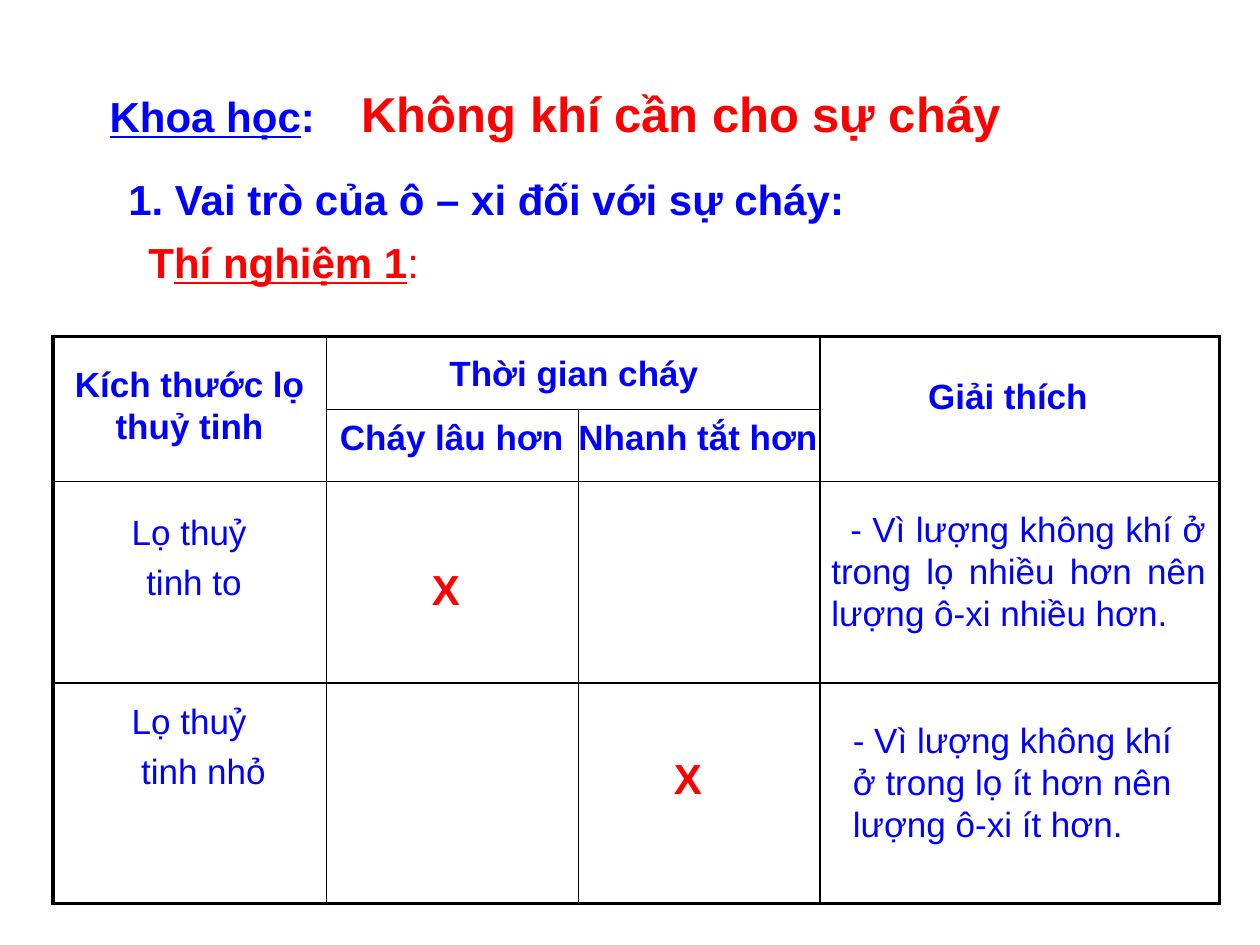
from dataclasses import dataclass
from typing import Optional

from lxml.etree import SubElement
from pptx import Presentation
from pptx.dml.color import RGBColor
from pptx.enum.text import PP_ALIGN
from pptx.oxml import parse_xml
from pptx.oxml.ns import nsdecls, qn
from pptx.util import Inches, Pt

BLUE = RGBColor(0x00, 0x00, 0xFF)
RED = RGBColor(0xFF, 0x00, 0x00)
BORDER = "000000"

# Character formats
BODY = {"size": Pt(20), "color": BLUE}
HEADER = {**BODY, "bold": True}
SECTION = {"size": Pt(24), "color": BLUE, "bold": True}
SUBJECT = {**SECTION, "underline": True}
LESSON = {"size": Pt(28), "color": RED, "bold": True}
EXPERIMENT = {**SECTION, "color": RED}
EXPERIMENT_LINK = {**EXPERIMENT, "underline": True}
EXPERIMENT_END = {"size": Pt(24), "color": RED}


@dataclass
class Line:
    runs: list
    align: PP_ALIGN = PP_ALIGN.LEFT
    before: float = 0
    left: float = 0
    first: float = 0
    tab: Optional[float] = None


@dataclass
class Label:
    x: float
    y: float
    w: float
    h: float
    lines: list
    margin_left: float = 0.1
    margin_top: float = 0.05


def centred(text: str, style: dict, **layout) -> Line:
    return Line([(text, style)], PP_ALIGN.CENTER, **layout)


def add_run(paragraph, text: str, style: dict) -> None:
    run = paragraph.add_run()
    run.text = text
    for name, value in {"name": "Arial", **style}.items():
        if name == "color":
            run.font.color.rgb = value
        else:
            setattr(run.font, name, value)


def add_label(slide, label: Label) -> None:
    box = slide.shapes.add_textbox(*map(Inches, (label.x, label.y, label.w, label.h)))
    frame = box.text_frame
    frame.word_wrap = True
    frame.margin_left = Inches(label.margin_left)
    frame.margin_top = Inches(label.margin_top)
    for index, line in enumerate(label.lines):
        paragraph = frame.add_paragraph() if index else frame.paragraphs[0]
        paragraph.alignment = line.align
        paragraph.space_before = Pt(line.before)
        properties = paragraph._p.get_or_add_pPr()
        properties.set("marL", str(Inches(line.left)))
        properties.set("indent", str(Inches(line.first)))
        if line.tab is not None:
            stops = SubElement(properties, qn("a:tabLst"))
            SubElement(stops, qn("a:tab"), pos=str(Inches(line.tab)), algn="l")
        for text, style in line.runs:
            add_run(paragraph, text, style)


def set_borders(cell, widths: dict) -> None:
    properties = cell._tc.get_or_add_tcPr()
    for index, (side, width) in enumerate(widths.items()):
        properties.insert(index, parse_xml(
            f'<a:ln{side} {nsdecls("a")} w="{Pt(width)}"><a:solidFill>'
            f'<a:srgbClr val="{BORDER}"/></a:solidFill></a:ln{side}>'))


def add_grid(slide, x: float, y: float, columns: list, rows: list, merges: list) -> None:
    frame = slide.shapes.add_table(
        len(rows), len(columns),
        *map(Inches, (x, y, sum(columns), sum(rows))))
    table = frame.table
    table.first_row = table.horz_banding = False
    for column, width in zip(table.columns, columns):
        column.width = Inches(width)
    for row, height in zip(table.rows, rows):
        row.height = Inches(height)
    for start, end in merges:
        table.cell(*start).merge(table.cell(*end))

    # Thick frame outside, thin rules inside
    for r in range(len(rows)):
        for c in range(len(columns)):
            cell = table.cell(r, c)
            cell.fill.background()
            if cell.is_spanned:
                continue
            bottom, right = r, c
            if cell.is_merge_origin:
                bottom += cell.span_height - 1
                right += cell.span_width - 1
            outer = {"L": c == 0, "R": right == len(columns) - 1,
                     "T": r == 0, "B": bottom == len(rows) - 1}
            set_borders(cell, {side: 2.25 if edge else 1 for side, edge in outer.items()})


HEADINGS = [
    Label(0.67, 0, 9.58, 1.9, [Line([
        ("Khoa học", SUBJECT), (":\t", SECTION),
        ("Không khí cần cho sự cháy", LESSON)], tab=2.19)],
        margin_left=0.2, margin_top=0.66),
    Label(0.92, 1.33, 7.92, 0.5,
          [Line([("1. Vai trò của ô – xi đối với sự cháy:", SECTION)])]),
    Label(1.08, 1.83, 2.75, 1.11, [Line([
        ("T", EXPERIMENT), ("hí nghiệm 1", EXPERIMENT_LINK), (":", EXPERIMENT_END)])]),
]

TABLE_HEADERS = [
    Label(x, y, w, h, [centred(text, HEADER)])
    for x, y, w, h, text in [
        (0.42, 2.83, 2.17, 1.22, "Kích thước lọ thuỷ tinh"),
        (2.75, 2.74, 3.61, 0.93, "Thời gian cháy"),
        (2.42, 3.25, 2.33, 0.43, "Cháy lâu hơn"),
        (4.33, 3.25, 2.42, 0.43, "Nhanh tắt hơn"),
        (7, 2.92, 2, 0.43, "Giải thích"),
    ]
]

JARS = [
    Label(0.5, y, 2.08, h, [centred("Lọ thuỷ ", BODY),
                            centred(size, BODY, before=4.6, left=shift)])
    for y, h, size, shift in [(4, 1.45, "tinh to", 0), (5.5, 1.33, "tinh nhỏ", 0.15)]
]

EXPLANATIONS = [
    Label(6.5, 3.98, 3.17, 1.6, [Line(
        [("- Vì lượng không khí ở trong lọ nhiều hơn nên lượng ô-xi nhiều hơn.", BODY)],
        PP_ALIGN.JUSTIFY, first=0.15)]),
    Label(6.67, 5.65, 2.92, 1.6, [Line(
        [("- Vì lượng không khí ở trong lọ ít hơn nên lượng ô-xi ít hơn.", BODY)])]),
]

MARKS = [Label(x, y, 0.5, 0.5, [Line([("X", EXPERIMENT)])])
         for x, y in [(3.33, 4.42), (5.25, 5.92)]]


def main() -> None:
    presentation = Presentation()
    presentation.slide_width = Inches(10)
    presentation.slide_height = Inches(7.5)
    slide = presentation.slides.add_slide(presentation.slide_layouts[6])

    # Lesson headings
    for heading in HEADINGS:
        add_label(slide, heading)

    # Results table, with its entries laid over the cells
    add_grid(slide, 0.42, 2.67, [2.17, 2, 1.92, 3.17], [0.58, 0.57, 1.6, 1.75],
             merges=[((0, 0), (1, 0)), ((0, 1), (0, 2)), ((0, 3), (1, 3))])
    for entry in TABLE_HEADERS + JARS + EXPLANATIONS + MARKS:
        add_label(slide, entry)

    presentation.save("out.pptx")


if __name__ == "__main__":
    main()
